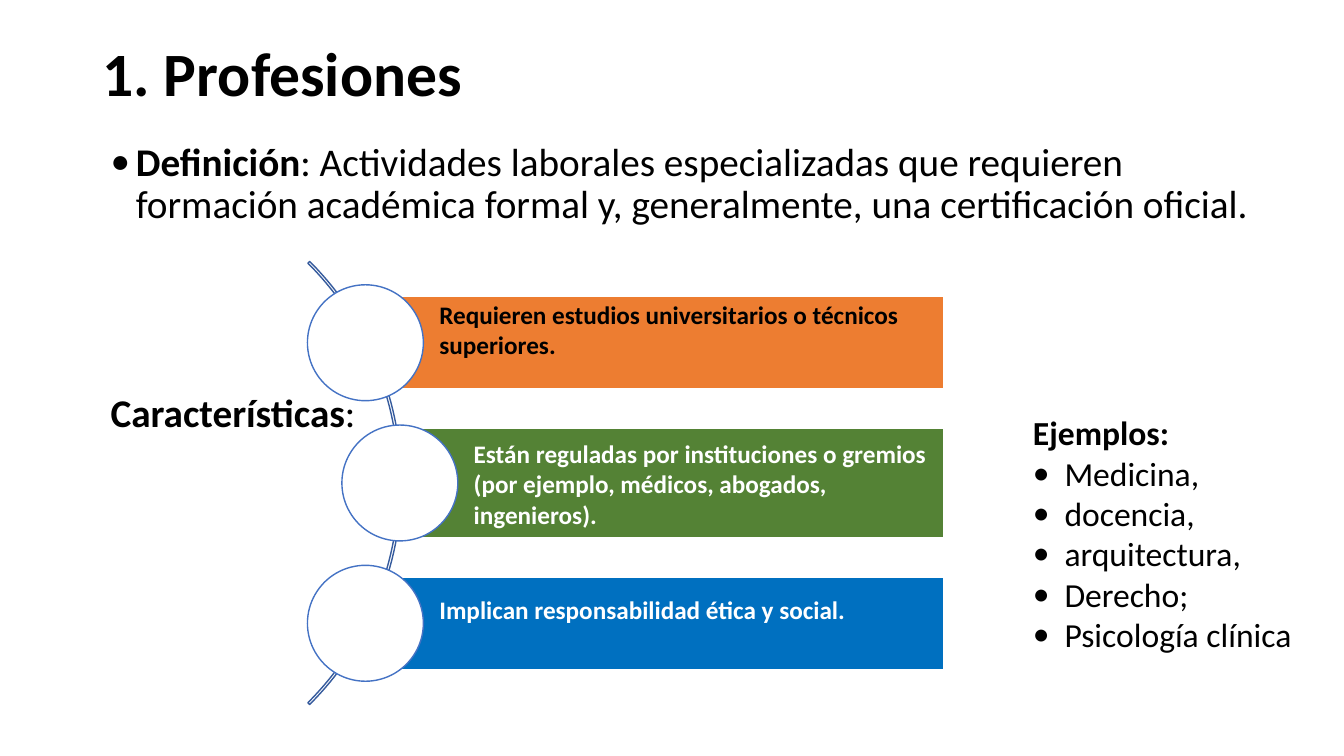
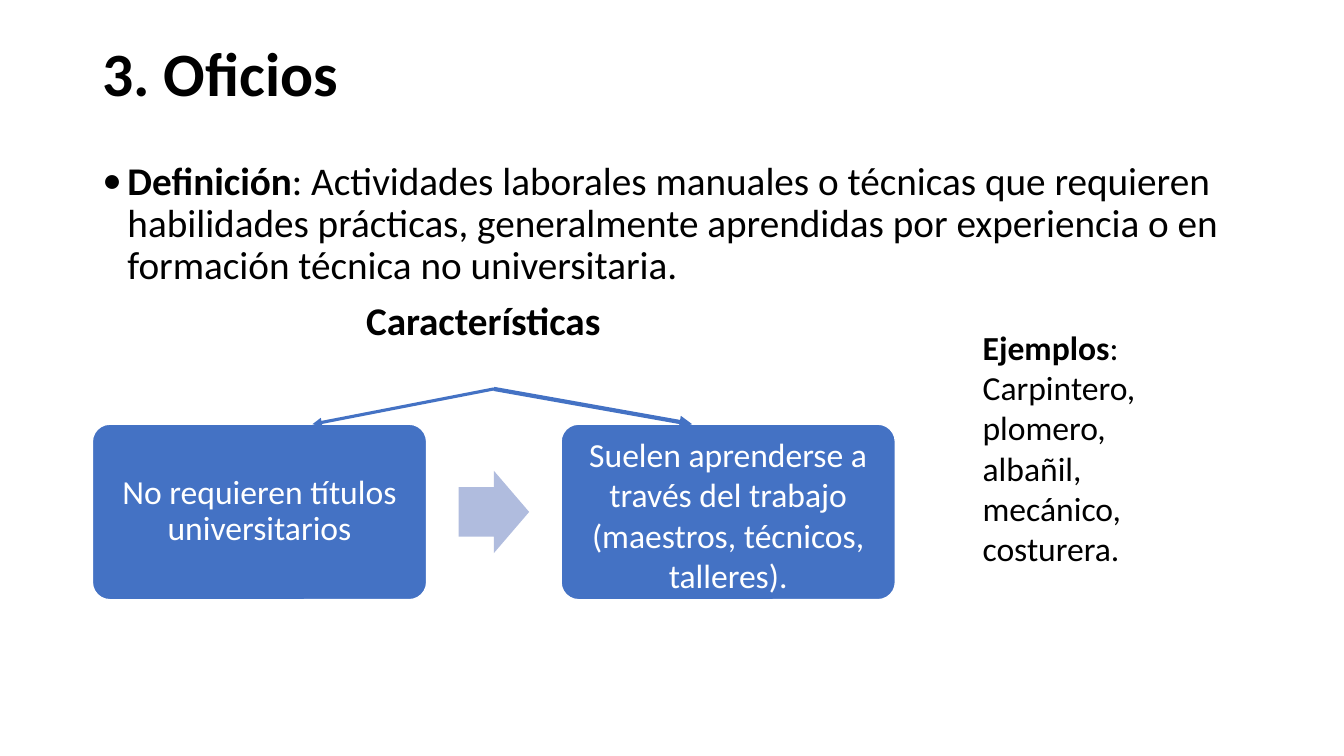
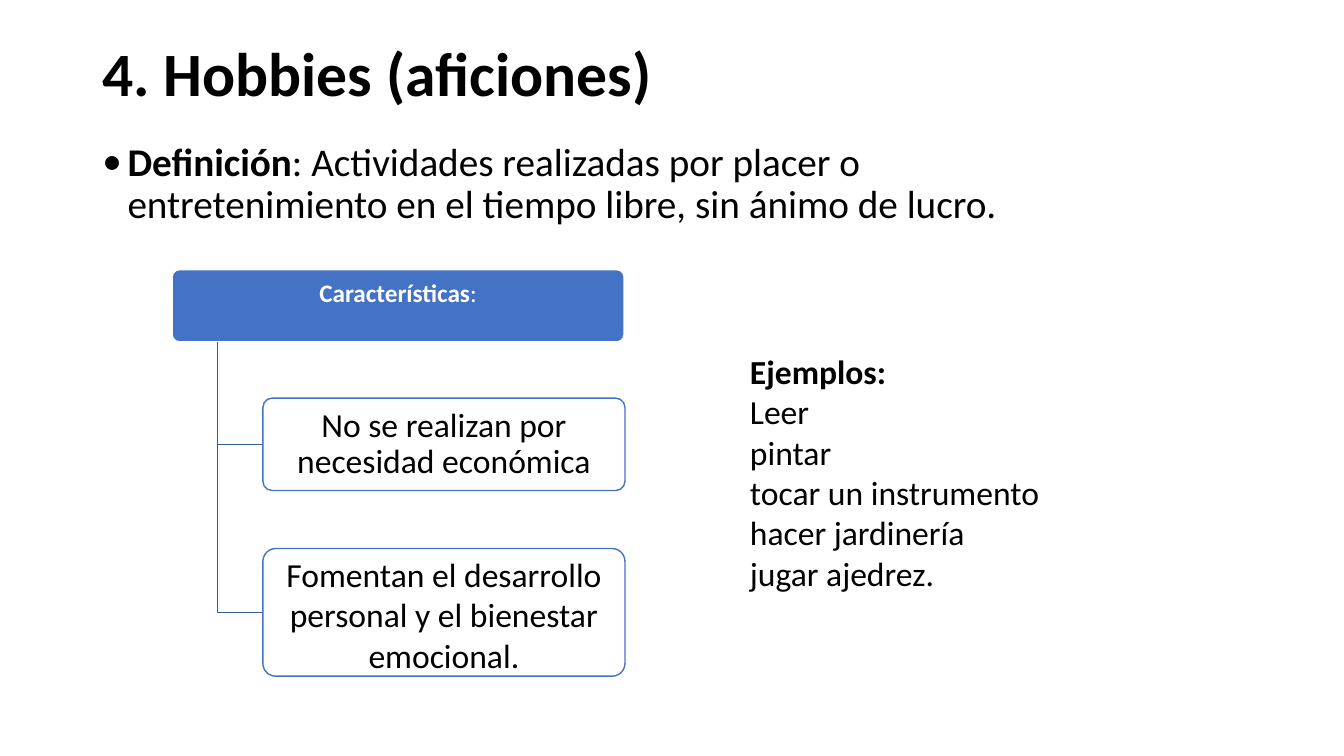
import pptx
import pptx.dml.color
import pptx.enum.shapes
import pptx.enum.text
import pptx.oxml.xmlchemy
import pptx.util

COLUMNS, ROWS = 160, 90
BLACK, WHITE, BLUE, DARK_BLUE = "000000", "FFFFFF", "4472C4", "365B9D"
ORANGE, GREEN, STRONG_BLUE, PALE_BLUE = "ED7D31", "548235", "0070C0", "B0BCDE"
FONT = "Calibri"
RAISED = 3.2

forms = pptx.enum.shapes.MSO_SHAPE
anchors = pptx.enum.text.MSO_ANCHOR
aligns = pptx.enum.text.PP_ALIGN
tint = pptx.dml.color.RGBColor.from_string

deck = pptx.Presentation()
cell = pptx.util.Inches(7.5 / ROWS)
deck.slide_width = COLUMNS * cell
deck.slide_height = ROWS * cell


def place(slide, form, box, fill=None, edge=None, adjustments=()):
    lengths = [round(length * cell) for length in box]
    if form is None:
        return slide.shapes.add_textbox(*lengths)
    shape = slide.shapes.add_shape(form, *lengths)
    shape.shadow.inherit = False
    for index, value in enumerate(adjustments):
        shape.adjustments[index] = value
    for target, colour in ((shape.fill, fill), (shape.line.fill, edge)):
        if colour:
            target.solid()
            target.fore_color.rgb = tint(colour)
        else:
            target.background()
    if edge:
        shape.line.width = pptx.util.Pt(1)
    return shape


def write(shape, paragraphs, size, ink=BLACK, spacing=1, align=aligns.LEFT,
          anchor=anchors.TOP, margins=(1.2, 0.6, 1.2, 0.6)):
    frame = shape.text_frame
    sides = ("margin_left", "margin_top", "margin_right", "margin_bottom")
    frame_format = {side: round(margin * cell) for side, margin in zip(sides, margins)}
    frame_format |= {"word_wrap": True, "vertical_anchor": anchor,
                     "auto_size": pptx.enum.text.MSO_AUTO_SIZE.NONE}
    for name, value in frame_format.items():
        setattr(frame, name, value)
    for index, (strong, plain, hang) in enumerate(paragraphs):
        paragraph = frame.add_paragraph() if index else frame.paragraphs[0]
        for name, value in {"alignment": align, "line_spacing": spacing}.items():
            setattr(paragraph, name, value)
        if hang:
            properties = paragraph._p.get_or_add_pPr()
            properties.set("marL", str(round(hang * cell)))
            properties.set("indent", str(-round(hang * cell)))
            for tag, key, value in (("a:buFont", "typeface", FONT), ("a:buChar", "char", "•")):
                bullet = pptx.oxml.xmlchemy.OxmlElement(tag)
                bullet.set(key, value)
                properties.append(bullet)
        for text, bold in ((strong, True), (plain, False)):
            if text:
                run = paragraph.add_run()
                run.text = text
                font_format = {"name": FONT, "size": pptx.util.Pt(size), "bold": bold}
                for name, value in font_format.items():
                    setattr(run.font, name, value)
                run.font.color.rgb = tint(ink)


topics = [
    {"heading": "1. Profesiones",
     "definition": ": Actividades laborales especializadas que requieren formación académica "
                   "formal y, generalmente, una certificación oficial.",
     "definition_box": (12, 16.4, 138, 11.2),
     "examples": [("Ejemplos:", "", 0)] + [("", example, 3.75) for example in (
         "Medicina,", "docencia,", "arquitectura,", "Derecho;", "Psicología clínica")],
     "examples_box": (121.8, 48.5, 35.8, 30.2)},
    {"heading": "3. Oficios",
     "definition": ": Actividades laborales manuales o técnicas que requieren habilidades "
                   "prácticas, generalmente aprendidas por experiencia o en formación técnica "
                   "no universitaria.",
     "definition_box": (11, 18.6, 138, 16.3),
     "examples": [("Ejemplos", ": Carpintero, plomero, albañil, mecánico, costurera.", 0)],
     "examples_box": (115.8, 38.3, 29.6, 30.2)},
    {"heading": "4. Hobbies (aficiones)",
     "definition": ": Actividades realizadas por placer o entretenimiento en el tiempo libre, "
                   "sin ánimo de lucro.",
     "definition_box": (11, 16.4, 118, 11.2),
     "examples": [("Ejemplos:", "", 0)] + [("", example, 0) for example in (
         "Leer", "pintar", "tocar un instrumento hacer jardinería", "jugar ajedrez.")],
     "examples_box": (88.1, 41.2, 38.8, 30.2)},
]

title_place = {"left": 11, "top": 4.3, "width": 138, "height": 9.6}
slides = []
for topic in topics:
    slide = deck.slides.add_slide(deck.slide_layouts[5])
    slides.append(slide)
    title = slide.shapes.title
    for name, value in title_place.items():
        setattr(title, name, round(value * cell))
    write(title, [(topic["heading"], "", 0)], 44, spacing=0.9, anchor=anchors.MIDDLE)
    write(place(slide, None, topic["definition_box"]),
          [("Definición", topic["definition"], 3)], 28, spacing=0.9)
    write(place(slide, None, topic["examples_box"]), topic["examples"], 24)

professions, trades, hobbies = slides

write(place(professions, None, (12, 45.6, 32.4, 6.9)), [("Características", ":", 0)], 28)
place(professions, forms.BLOCK_ARC, (-26.8, 20.2, 74.6, 74.6), edge=DARK_BLUE,
      adjustments=(189, 27, 0.004))
diameter, bar_right = 13.8, 112.4
traits = [
    {"text": "Requieren estudios universitarios o técnicos superiores.",
     "fill": ORANGE, "ink": BLACK, "center": 43.5, "height": 11, "above": 0, "below": RAISED},
    {"text": "Están reguladas por instituciones o gremios "
             "(por ejemplo, médicos, abogados, ingenieros).",
     "fill": GREEN, "ink": WHITE, "center": 47.6, "height": 13, "above": 0.2, "below": 0},
    {"text": "Implican responsabilidad ética y social.",
     "fill": STRONG_BLUE, "ink": WHITE, "center": 43.5, "height": 11, "above": 0,
     "below": RAISED},
]
for row, trait in enumerate(traits):
    middle = 40.8 + 16.7 * row
    center, height = trait["center"], trait["height"]
    bar = place(professions, forms.RECTANGLE,
                (center, middle - height / 2, bar_right - center, height),
                trait["fill"], WHITE)
    write(bar, [(trait["text"], "", 0)], 18, trait["ink"], anchor=anchors.MIDDLE,
          margins=(8.8, trait["above"], 1.2, trait["below"]))
    place(professions, forms.OVAL,
          (center - diameter / 2, middle - diameter / 2, diameter, diameter), WHITE, BLUE)

write(place(trades, None, (42.4, 34.7, 32, 6.9)), [("Características", "", 0)], 28)
left, top, width, height, gap = 11, 50.5, 39.8, 20.9, 16
arrow_width, arrow_height = 8.4, 9.8
place(trades, forms.RIGHT_ARROW,
      (left + width + (gap - arrow_width) / 2, top + (height - arrow_height) / 2,
       arrow_width, arrow_height),
      PALE_BLUE, adjustments=(0.6, 0.5))
steps = [
    {"text": "No requieren títulos universitarios",
     "spacing": 0.9, "above": 0, "tip": 37.2, "weight": 2.25},
    {"text": "Suelen aprenderse a través del trabajo (maestros, técnicos, talleres).",
     "spacing": 1, "above": 0.6, "tip": 82.4, "weight": 3},
]
for column, step in enumerate(steps):
    card = place(trades, forms.ROUNDED_RECTANGLE,
                 (left + column * (width + gap), top, width, height), BLUE, WHITE, (0.1,))
    write(card, [("", step["text"], 0)], 24, WHITE, step["spacing"], aligns.CENTER,
          anchors.MIDDLE, margins=(1.8, step["above"], 1.8, 0))
    ends = [round(length * cell) for length in (58.8, 46.3, step["tip"], top)]
    branch = trades.shapes.add_connector(pptx.enum.shapes.MSO_CONNECTOR.STRAIGHT, *ends)
    branch.line.color.rgb = tint(BLUE)
    branch.line.width = pptx.util.Pt(step["weight"])
    arrowhead = pptx.oxml.xmlchemy.OxmlElement("a:tailEnd")
    arrowhead.set("type", "triangle")
    branch.line._get_or_add_ln().append(arrowhead)
    branch._element.spPr.append(pptx.oxml.xmlchemy.OxmlElement("a:effectLst"))

header_top, header_height = 32.1, 8.6
header = place(hobbies, forms.ROUNDED_RECTANGLE, (20.5, header_top, 53.8, header_height),
               BLUE, WHITE, (0.1,))
write(header, [("Características", ":", 0)], 18, WHITE, align=aligns.CENTER,
      anchor=anchors.MIDDLE, margins=(0.8, 0, 0.8, RAISED))
trunk, child_left, child_width = 25.9, 31.3, 43.1
children = [
    {"text": "No se realizan por necesidad económica",
     "top": 47.4, "height": 11, "spacing": 0.9, "above": 0},
    {"text": "Fomentan el desarrollo personal y el bienestar emocional.",
     "top": 65.3, "height": 15.2, "spacing": 1, "above": 0.5},
]
for child in children:
    start_x, start_y, end_x, end_y = [round(length * cell) for length in (
        trunk, header_top + header_height, child_left, child["top"] + child["height"] / 2)]
    outline = hobbies.shapes.build_freeform(start_x, start_y)
    outline.add_line_segments([(start_x, end_y), (end_x, end_y)], close=False)
    elbow = outline.convert_to_shape()
    elbow.shadow.inherit = False
    elbow.fill.background()
    elbow.line.color.rgb = tint(DARK_BLUE)
    elbow.line.width = pptx.util.Pt(1)
    card = place(hobbies, forms.ROUNDED_RECTANGLE,
                 (child_left, child["top"], child_width, child["height"]),
                 WHITE, BLUE, (0.1,))
    write(card, [("", child["text"], 0)], 24, BLACK, child["spacing"], aligns.CENTER,
          anchors.MIDDLE, margins=(0.9, child["above"], 0.9, 0))

deck.save("out.pptx")
